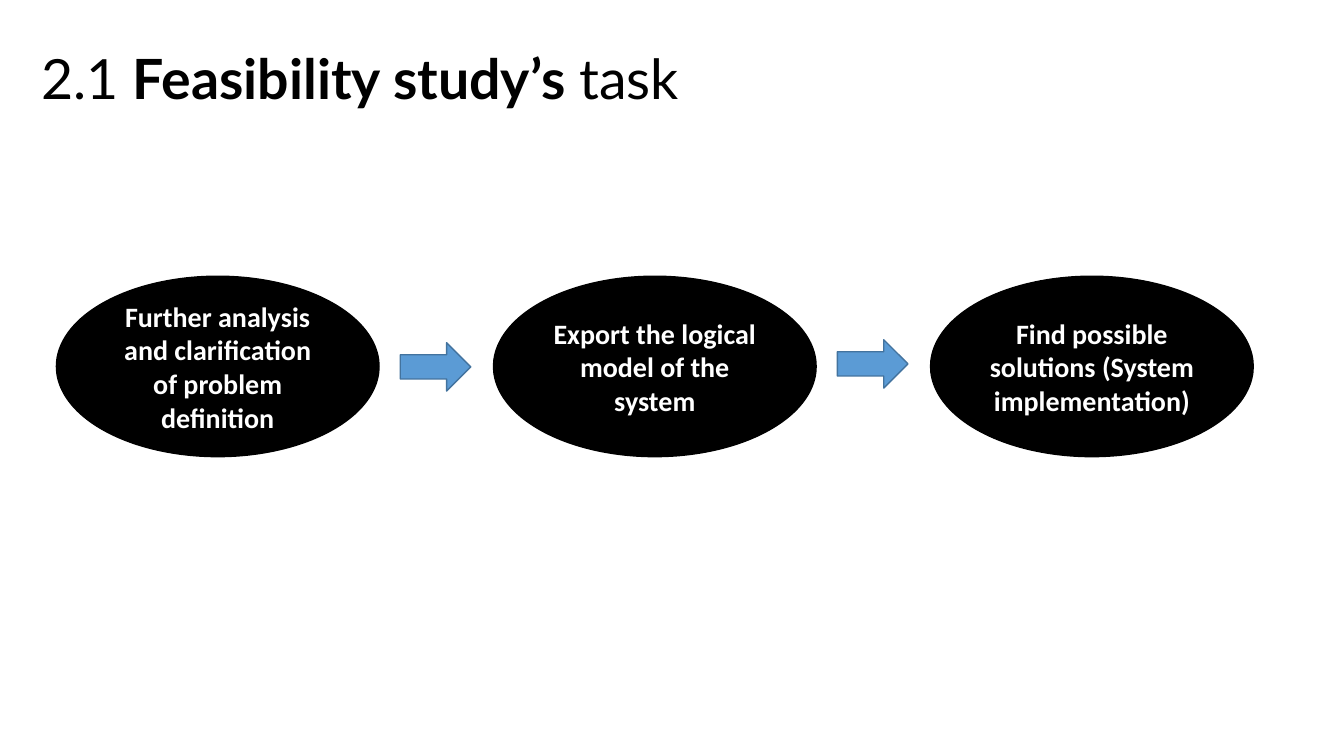
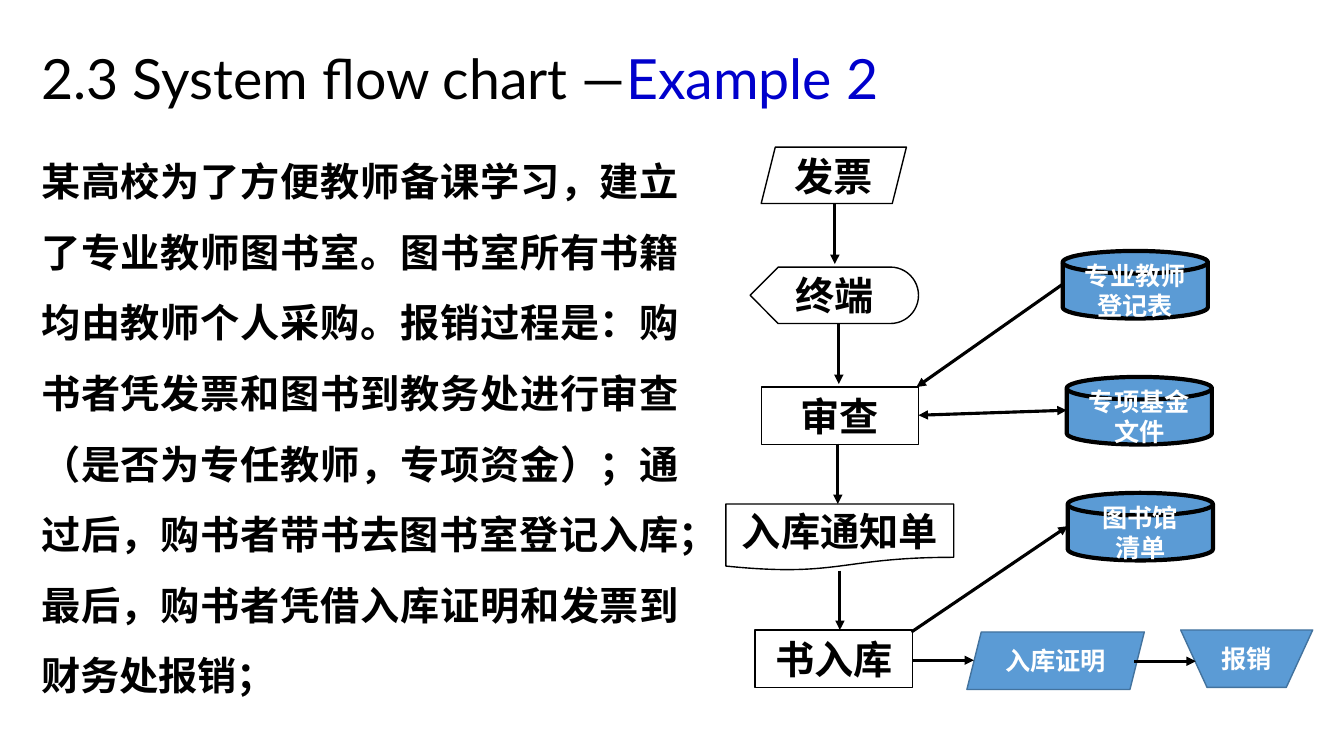
from lxml import etree
from pptx import Presentation
from pptx import util as u
from pptx.dml.color import RGBColor
from pptx.enum import shapes, text
from pptx.oxml import ns

BLACK, WHITE, BLUE, EDGE, LINK = "000000", "FFFFFF", "5B9BD5", "43739E", "0000CC"
SHAPE = shapes.MSO_SHAPE
ALIGN = text.PP_ALIGN


def color(code):
    """Turn a hex string into a colour."""
    return RGBColor.from_string(code)


def style(font, name, size, ink, bold=False):
    """Set the face, size, colour and weight of a font."""
    font.name = name
    font.size = u.Pt(size)
    font.color.rgb = color(ink)
    font.bold = bold


def box(left, top, width, height):
    """Convert a frame in inches to lengths."""
    return [u.Inches(v) for v in (left, top, width, height)]


def add_slide(deck, runs):
    """Add a slide whose title is made of (words, bold, colour) runs."""
    slide = deck.slides.add_slide(deck.slide_layouts[5])
    title = slide.shapes.title
    title.left, title.top, title.width, title.height = box(0.31, 0.43, 9.91, 0.75)
    frame = title.text_frame
    frame.auto_size = text.MSO_AUTO_SIZE.NONE
    frame.vertical_anchor = text.MSO_ANCHOR.MIDDLE
    para = frame.paragraphs[0]
    para.alignment = ALIGN.LEFT
    para.line_spacing = 0.9
    for words, bold, ink in runs:
        run = para.add_run()
        run.text = words
        style(run.font, "Lato", 39.6, ink, bold)
    return slide


def add_node(slide, kind, frame, words="", fill=BLUE, edge=EDGE,
             width=1, size=18, ink=WHITE, face="Calibri"):
    """Add a filled, outlined shape with centred bold words."""
    node = slide.shapes.add_shape(kind, *box(*frame))
    node.shadow.inherit = False
    node.fill.solid()
    node.fill.fore_color.rgb = color(fill)
    node.line.color.rgb = color(edge)
    node.line.width = u.Pt(width)
    if words:
        node.text_frame.text = words
        node.text_frame.vertical_anchor = text.MSO_ANCHOR.MIDDLE
        for para in node.text_frame.paragraphs:
            para.alignment = ALIGN.CENTER
            style(para.font, face, size, ink, True)


def add_arrow(slide, start, end, both=False):
    """Add a straight arrow, pointing both ways on request."""
    ends = [u.Inches(v) for v in (*start, *end)]
    link = slide.shapes.add_connector(shapes.MSO_CONNECTOR.STRAIGHT, *ends)
    link.line.color.rgb = color(BLACK)
    link.line.width = u.Pt(2.25)
    line = link.line._get_or_add_ln()
    for tag in ("a:headEnd", "a:tailEnd") if both else ("a:tailEnd",):
        etree.SubElement(line, ns.qn(tag), type="triangle")
    etree.SubElement(link._element.spPr, ns.qn("a:effectLst"))


def add_body(slide, frame, words):
    """Add a justified paragraph of body text."""
    body = slide.shapes.add_textbox(*box(*frame)).text_frame
    body.word_wrap = True
    body.text = words
    para = body.paragraphs[0]
    para.alignment = ALIGN.JUSTIFY
    para.line_spacing = 1.5
    style(para.font, "Roboto Condensed", 28, BLACK, True)


def build_task(deck):
    """Build the slide with the three tasks in a row."""
    slide = add_slide(deck, [("2.1 ", False, BLACK),
                             ("Feasibility study’s ", True, BLACK),
                             ("task", False, BLACK)])
    step = 4.335
    tasks = ["Further analysis and clarification of problem definition",
             "Export the logical model of the system",
             "Find possible solutions (System implementation)"]
    for i, words in enumerate(tasks):
        add_node(slide, SHAPE.OVAL, (0.56 + i * step, 2.74, 3.2, 1.79), words,
                 fill=BLACK, edge=BLACK, size=20)
    for i, top in enumerate((3.4, 3.37)):
        add_node(slide, SHAPE.RIGHT_ARROW, (3.97 + i * step, top, 0.7, 0.48))


def build_flow(deck):
    """Build the slide with the story and its flow chart."""
    slide = add_slide(deck, [("2.3 System flow chart —", False, BLACK),
                             ("Example 2", False, LINK)])
    add_body(slide, (0.31, 1.28, 6.53, 5.37),
             "某高校为了方便教师备课学习，建立了专业教师图书室。"
             "图书室所有书籍均由教师个人采购。"
             "报销过程是：购书者凭发票和图书到教务处进行审查"
             "（是否为专任教师，专项资金）；"
             "通过后，购书者带书去图书室登记入库；"
             "最后，购书者凭借入库证明和发票到财务处报销；")

    steps = [
        (SHAPE.PARALLELOGRAM, (7.55, 1.46, 1.44, 0.56), "发票", "Calibri"),
        (SHAPE.FLOWCHART_DISPLAY, (7.44, 2.65, 1.67, 0.56), "终端", "Times New Roman"),
        (SHAPE.RECTANGLE, (7.55, 3.84, 1.56, 0.57), "审查", "Calibri"),
        (SHAPE.FLOWCHART_DOCUMENT, (7.2, 5, 2.26, 0.66), "入库通知单", "Calibri"),
        (SHAPE.RECTANGLE, (7.49, 6.25, 1.56, 0.57), "书入库", "Calibri"),
    ]
    for kind, frame, words, face in steps:
        add_node(slide, kind, frame, words, fill=WHITE, edge=BLACK,
                 size=28, ink=BLACK, face=face)

    disks = [(10.54, 2.49, "专业教师登记表"),
             (10.58, 3.74, "专项基金文件"),
             (10.59, 4.89, "图书馆\n清单")]
    for left, top, words in disks:
        add_node(slide, SHAPE.FLOWCHART_MAGNETIC_DISK, (left, top, 1.44, 0.67),
                 words, edge=BLACK, width=3)

    add_node(slide, SHAPE.PARALLELOGRAM, (9.59, 6.27, 1.76, 0.57), "入库证明")
    add_node(slide, SHAPE.FLOWCHART_MANUAL_OPERATION, (11.71, 6.25, 1.31, 0.57), "报销")

    for x, top, end in [(8.28, 2.02, 2.62), (8.32, 3.21, 3.81),
                        (8.31, 4.4, 5), (8.33, 5.66, 6.25)]:
        add_arrow(slide, (x, top), (x, end))
    for left, end, y in [(9.05, 9.66, 6.55), (11.25, 11.86, 6.56)]:
        add_arrow(slide, (left, y), (end, y))
    add_arrow(slide, (10.54, 2.82), (9.09, 3.84))
    add_arrow(slide, (10.58, 4.07), (9.11, 4.12), both=True)
    add_arrow(slide, (9.04, 6.27), (10.59, 5.22))


def main():
    """Build the deck and save it."""
    deck = Presentation()
    deck.slide_width, deck.slide_height = u.Inches(13.33), u.Inches(7.5)
    build_task(deck)
    build_flow(deck)
    deck.save("out.pptx")


if __name__ == "__main__":
    main()
